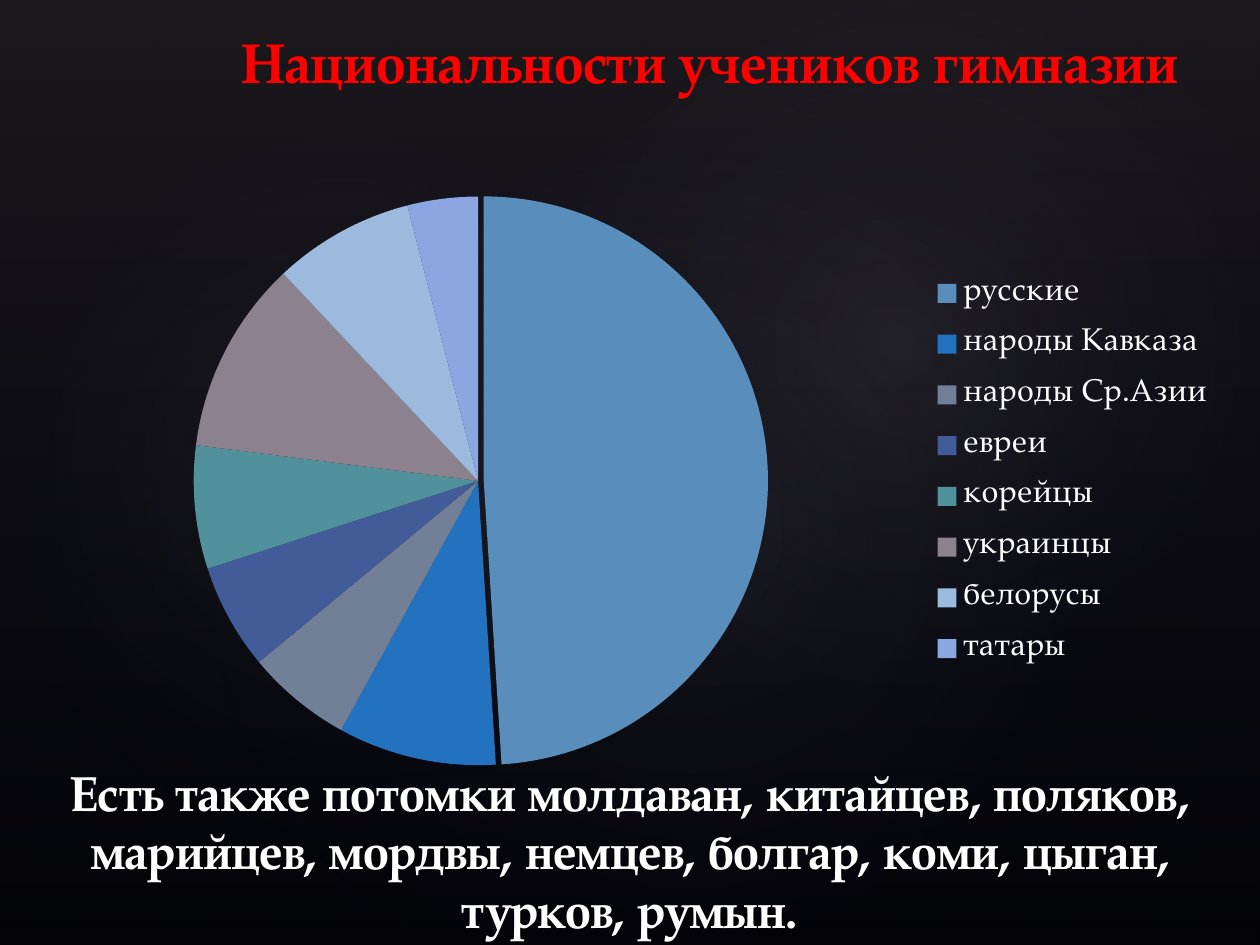
"""Build a slide with a pie chart of pupils' nationalities."""
from lxml import etree
from pptx import Presentation
from pptx.chart.data import CategoryChartData
from pptx.dml.color import RGBColor
from pptx.enum.chart import XL_CHART_TYPE, XL_LEGEND_POSITION
from pptx.enum.shapes import MSO_SHAPE
from pptx.enum.text import MSO_ANCHOR, MSO_AUTO_SIZE, PP_ALIGN
from pptx.oxml import parse_xml
from pptx.oxml.ns import qn
from pptx.util import Inches, Pt

PIE = XL_CHART_TYPE.PIE
RIGHT = XL_LEGEND_POSITION.RIGHT
RECTANGLE, OVAL = MSO_SHAPE.RECTANGLE, MSO_SHAPE.OVAL
BOTTOM, CENTER, NO_FIT = MSO_ANCHOR.BOTTOM, PP_ALIGN.CENTER, MSO_AUTO_SIZE.NONE

BLACK = RGBColor(0x00, 0x00, 0x00)
WHITE = RGBColor(0xFF, 0xFF, 0xFF)
RED = RGBColor(0xFF, 0x00, 0x00)
PLUM = RGBColor(0x50, 0x46, 0x52)
NAVY = RGBColor(0x24, 0x28, 0x52)
MIST = RGBColor(0xC4, 0xBC, 0xC6)
FONT = "TeX Gyre Pagella"

WIDTH, HEIGHT = 10, 7.5
CHART_TITLE = "Национальности учеников гимназии"
CAPTION = ("Есть также потомки молдаван, китайцев, поляков, марийцев, мордвы, "
           "немцев, болгар, коми, цыган, турков, румын.")
NATIONALITIES = [
    ("русские", 49, RGBColor(0x58, 0x8D, 0xBC)),
    ("народы Кавказа", 9, RGBColor(0x23, 0x72, 0xBF)),
    ("народы Ср.Азии", 6, RGBColor(0x72, 0x80, 0x97)),
    ("евреи", 6, RGBColor(0x42, 0x5B, 0x99)),
    ("корейцы", 7, RGBColor(0x50, 0x91, 0x9B)),
    ("украинцы", 11, RGBColor(0x8C, 0x81, 0x8F)),
    ("белорусы", 8, RGBColor(0x9C, 0xBA, 0xDD)),
    ("татары", 4, RGBColor(0x8B, 0xA6, 0xE0)),
]
LINEAR = '<a:lin ang="5400000" scaled="0"/>'
RADIAL = ('<a:path path="circle">'
          '<a:fillToRect l="50000" t="50000" r="50000" b="50000"/></a:path>')
# kind, box, rotation, gradient stops (position, colour, opacity), direction
BACKDROP = [
    (RECTANGLE, (0, 0, WIDTH, HEIGHT), 0, [(0, PLUM, 36), (100, NAVY, 10)], LINEAR),
    (OVAL, (1.5, 1.14, 7.92, 6.24), 328.7, [(0, MIST, 7), (58, NAVY, 0)], RADIAL),
    (OVAL, (-0.3, 1.28, 6.06, 4.9), 294.3, [(0, MIST, 8), (58, NAVY, 0)], RADIAL),
    (OVAL, (3.58, 0.13, 7.09, 5.2), 328.7, [(0, MIST, 8), (58, NAVY, 0)], RADIAL),
]
CHART_BOX = (0.2, 0.21, 9.61, 6.14)
TITLE_PLACE = {"x": 0.17, "y": 0}
PLOT_PLACE = {"x": 0.016, "y": 0.22, "w": 0.716, "h": 0.735}
LEGEND_PLACE = {"x": 0.74, "y": 0.3, "w": 0.25, "h": 0.55}
CAPTION_BOX = (0, 5.88, WIDTH, 1.62)


def inches(box):
    return [Inches(length) for length in box]


def style_font(font, size, color, bold=False):
    font.name, font.size, font.bold = FONT, Pt(size), bold
    font.color.rgb = color


def add_backdrop(slide, kind, box, rotation, stops, direction):
    shape = slide.shapes.add_shape(kind, *inches(box))
    shape.rotation = rotation
    shape.shadow.inherit = False
    shape.line.fill.background()
    stop_xml = "".join(
        f'<a:gs pos="{position * 1000}"><a:srgbClr val="{color}">'
        f'<a:alpha val="{opacity * 1000}"/></a:srgbClr></a:gs>'
        for position, color, opacity in stops)
    gradient = parse_xml(
        '<a:gradFill xmlns:a="http://schemas.openxmlformats.org/drawingml/2006/main" '
        f'rotWithShape="1"><a:gsLst>{stop_xml}</a:gsLst>{direction}</a:gradFill>')
    shape._element.spPr.find(qn("a:prstGeom")).addnext(gradient)


def place(element, position, predecessor=None, inner=False):
    for old in element.findall(qn("c:layout")):
        element.remove(old)
    layout = etree.Element(qn("c:layout"))
    manual = etree.SubElement(layout, qn("c:manualLayout"))
    settings = {"layoutTarget": "inner"} if inner else {}
    settings.update(xMode="edge", yMode="edge", **position)
    for name, value in settings.items():
        etree.SubElement(manual, qn(f"c:{name}")).set("val", str(value))
    if predecessor is None:
        element.insert(0, layout)
    else:
        element.find(qn(predecessor)).addnext(layout)


def add_pie(slide):
    data = CategoryChartData()
    data.categories = [name for name, _, _ in NATIONALITIES]
    data.add_series("Series 1", [value for _, value, _ in NATIONALITIES])
    chart = slide.shapes.add_chart(PIE, *inches(CHART_BOX), data).chart
    style_font(chart.font, 18, WHITE)

    chart.has_title = True
    title_frame = chart.chart_title.text_frame
    title_frame.text = CHART_TITLE
    style_font(title_frame.paragraphs[0].font, 32, RED, True)
    chart.chart_title.include_in_layout = False
    place(chart.chart_title._element, TITLE_PLACE, "c:tx")

    chart.has_legend = True
    chart.legend.position = RIGHT
    chart.legend.include_in_layout = False
    place(chart.legend._element, LEGEND_PLACE, "c:legendPos")
    place(chart._chartSpace.chart.plotArea, PLOT_PLACE, inner=True)

    plot = chart.plots[0]
    plot.vary_by_categories = True
    series = plot.series[0]
    for index, (_, _, color) in enumerate(NATIONALITIES):
        point_format = series.points[index].format
        point_format.fill.solid()
        point_format.fill.fore_color.rgb = color
        point_format.line.fill.background()
    first_point = series._element.find(qn("c:dPt"))
    explosion = etree.Element(qn("c:explosion"))
    explosion.set("val", "2")
    first_point.find(qn("c:spPr")).addprevious(explosion)


def add_caption(slide):
    title = slide.shapes.title
    title.left, title.top, title.width, title.height = inches(CAPTION_BOX)
    frame = title.text_frame
    frame.text = CAPTION
    frame.word_wrap = True
    frame.auto_size = NO_FIT
    frame.vertical_anchor = BOTTOM
    paragraph = frame.paragraphs[0]
    paragraph.alignment = CENTER
    style_font(paragraph.font, 28, WHITE, True)
    slide.shapes._spTree.append(title._element)


def main():
    presentation = Presentation()
    presentation.slide_width, presentation.slide_height = inches((WIDTH, HEIGHT))
    slide = presentation.slides.add_slide(presentation.slide_layouts[5])
    slide.background.fill.solid()
    slide.background.fill.fore_color.rgb = BLACK
    for item in BACKDROP:
        add_backdrop(slide, *item)
    add_pie(slide)
    add_caption(slide)
    presentation.save("out.pptx")


if __name__ == "__main__":
    main()
